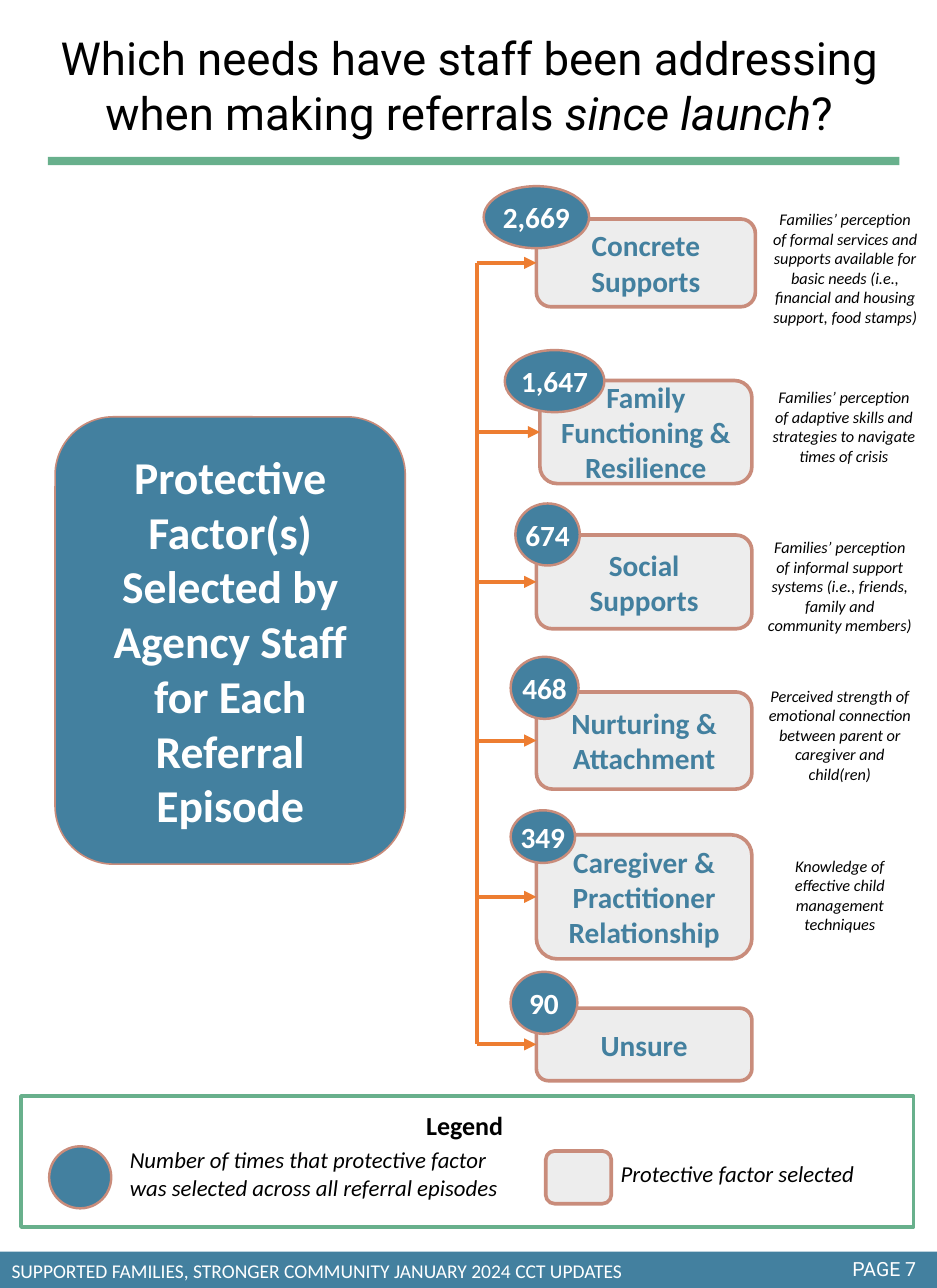
from lxml import etree
from pptx import Presentation
from pptx.dml.color import RGBColor
from pptx.enum.shapes import MSO_CONNECTOR, MSO_SHAPE
from pptx.enum.text import MSO_ANCHOR, MSO_AUTO_SIZE, PP_ALIGN
from pptx.oxml.ns import qn
from pptx.util import Inches, Pt

RECT, ROUNDED, OVAL = MSO_SHAPE.RECTANGLE, MSO_SHAPE.ROUNDED_RECTANGLE, MSO_SHAPE.OVAL
STRAIGHT = MSO_CONNECTOR.STRAIGHT
LEFT, CENTER = PP_ALIGN.LEFT, PP_ALIGN.CENTER
TOP, MIDDLE = MSO_ANCHOR.TOP, MSO_ANCHOR.MIDDLE
GROW = MSO_AUTO_SIZE.SHAPE_TO_FIT_TEXT

BLUE, GREEN, ROSE, ORANGE = "43809F", "68B08C", "C98C7B", "ED7D31"
GREY, WHITE, BLACK = "EDEDED", "FFFFFF", "000000"

TITLE = {"name": "Roboto", "size": Pt(28)}
PAGE = {"name": "Roboto", "size": Pt(12)}
FOOTER = {"name": "Calibri", "size": Pt(12)}
TOPIC = {"name": "Calibri", "size": Pt(28), "bold": True}
FACTOR = {"name": "Calibri", "size": Pt(18), "bold": True}
HEADING = {"name": "Calibri", "size": Pt(16), "bold": True}
KEY = {"name": "Calibri", "size": Pt(14), "italic": True}
MEANING = {"name": "Calibri", "size": Pt(10), "italic": True}

TRUNK_X = 4.07
FACTORS = [
    ("Concrete Supports", (4.58, 1.87, 1.87, 0.75),
     "2,669", (4.13, 1.59, 0.9, 0.53),
     "Families’ perception of formal services and supports available for basic needs "
     "(i.e., financial and housing support, food stamps)", (6.49, 1.74, 1.45, 1.11)),
    ("Family Functioning & Resilience", (4.61, 3.25, 1.81, 0.88),
     "1,647", (4.31, 2.99, 0.85, 0.53),
     "Families’ perception of adaptive skills and strategies to navigate times of crisis",
     (6.48, 3.26, 1.45, 0.77)),
    ("Social Supports", (4.58, 4.57, 1.84, 0.8),
     "674", (4.4, 4.3, 0.55, 0.53),
     "Families’ perception of informal support systems "
     "(i.e., friends, family and community members)", (6.45, 4.54, 1.44, 0.94)),
    ("Nurturing & Attachment", (4.58, 5.91, 1.84, 0.83),
     "468", (4.36, 5.61, 0.58, 0.53),
     "Perceived strength of emotional connection between parent or caregiver and child(ren)",
     (6.45, 5.81, 1.44, 0.94)),
    ("Caregiver & Practitioner Relationship", (4.58, 7.13, 1.84, 1.06),
     "349", (4.36, 6.92, 0.55, 0.45),
     "Knowledge of effective child management techniques", (6.45, 7.26, 1.44, 0.77)),
    ("Unsure", (4.58, 8.61, 1.84, 0.62),
     "90", (4.36, 8.3, 0.57, 0.53), None, None),
]


def color(hex_string):
    """Turn a hex string into a colour."""
    return RGBColor.from_string(hex_string)


def lengths(box):
    """Convert a box of inches to lengths."""
    return [Inches(value) for value in box]


def within(box, left, top, width, height):
    """Place a box relative to the corner of another."""
    return box[0] + left, box[1] + top, width, height


def write(frame, paragraphs, style, ink, align=LEFT, anchor=TOP):
    """Write paragraphs, each a list of (words, format changes) runs."""
    frame.vertical_anchor = anchor
    for index, runs in enumerate(paragraphs):
        paragraph = frame.paragraphs[0] if index == 0 else frame.add_paragraph()
        paragraph.alignment = align
        for words, changes in runs:
            run = paragraph.add_run()
            run.text = words
            run.font.color.rgb = color(ink)
            for key, value in {**style, **changes}.items():
                setattr(run.font, key, value)


def add_block(slide, kind, box, fill=None, line=None, weight=1.0):
    """Add a flat preset shape."""
    block = slide.shapes.add_shape(kind, *lengths(box))
    block.shadow.inherit = False
    if fill:
        block.fill.solid()
        block.fill.fore_color.rgb = color(fill)
    else:
        block.fill.background()
    if line:
        block.line.color.rgb = color(line)
        block.line.width = Pt(weight)
    else:
        block.line.fill.background()
    return block


def add_label(slide, box, paragraphs, style, ink, align=LEFT, wrap=True):
    """Add a text box that grows with its text."""
    frame = slide.shapes.add_textbox(*lengths(box)).text_frame
    frame.word_wrap = wrap
    frame.auto_size = GROW
    write(frame, paragraphs, style, ink, align)


def add_branch(slide, start, end, arrow=False):
    """Add an orange line, with an arrowhead if asked."""
    branch = slide.shapes.add_connector(STRAIGHT, *lengths(start + end))
    branch.line.color.rgb = color(ORANGE)
    branch.line.width = Pt(2.5)
    if arrow:
        etree.SubElement(branch.line._get_or_add_ln(), qn("a:tailEnd"), type="triangle")
    etree.SubElement(branch._element.spPr, qn("a:effectLst"))
    return branch


def add_header(slide, box):
    """Add the title with the green rule under it."""
    left, top, width, height = box
    question = [[("Which needs have staff been addressing when making referrals ", {}),
                 ("since launch", {"italic": True}), ("?", {})]]
    add_label(slide, box, question, TITLE, BLACK, CENTER)
    add_block(slide, RECT, (left + 0.14, top + height + 0.09, width - 0.2, 0.07), GREEN)


def add_topic(slide, box):
    """Add the large block that names what is counted."""
    topic = add_block(slide, ROUNDED, box, BLUE, ROSE)
    words = "Protective Factor(s) Selected by Agency Staff for Each Referral Episode"
    write(topic.text_frame, [[(words, {})]], TOPIC, WHITE, CENTER, MIDDLE)


def add_factor(slide, name, box, count, count_box, meaning, meaning_box):
    """Add one factor with its count, arrow and meaning."""
    factor = add_block(slide, ROUNDED, box, GREY, ROSE, 2.25)
    write(factor.text_frame, [[(name, {})]], FACTOR, BLUE, CENTER, MIDDLE)
    badge = add_block(slide, OVAL, count_box, BLUE, ROSE, 1.5)
    badge.text_frame.margin_left = badge.text_frame.margin_right = 0
    write(badge.text_frame, [[(count, {})]], FACTOR, WHITE, CENTER, MIDDLE)
    middle = box[1] + box[3] / 2
    add_branch(slide, (TRUNK_X, middle), (box[0], middle), True).end_connect(factor, 1)
    if meaning:
        add_label(slide, meaning_box, [[(meaning, {})]], MEANING, BLACK, CENTER)


def add_factors(slide):
    """Add all factors and the trunk that joins their arrows."""
    for factor in FACTORS:
        add_factor(slide, *factor)
    first, last = FACTORS[0][1], FACTORS[-1][1]
    add_branch(slide, (TRUNK_X, first[1] + first[3] / 2), (TRUNK_X, last[1] + last[3] / 2))


def add_legend(slide, box):
    """Add the framed legend."""
    add_block(slide, RECT, box, None, GREEN, 2.25)
    add_label(slide, within(box, 3.36, 0.07, 0.87, 0.37), [[("Legend", {})]],
              HEADING, BLACK, wrap=False)
    add_block(slide, OVAL, within(box, 0.24, 0.43, 0.53, 0.53), BLUE, ROSE, 1.5)
    add_label(slide, within(box, 0.83, 0.38, 3.35, 0.57),
              [[("Number of times that protective factor", {})],
               [("was selected across all referral episodes", {})]], KEY, BLACK)
    add_block(slide, ROUNDED, within(box, 4.48, 0.47, 0.56, 0.45), GREY, ROSE, 2.25)
    add_label(slide, within(box, 5.02, 0.5, 2.65, 0.34),
              [[("Protective factor selected", {})]], KEY, BLACK)


def add_footer(slide, box):
    """Add the blue band with the report name and page number."""
    add_block(slide, RECT, box, BLUE)
    report = "SUPPORTED FAMILIES, STRONGER COMMUNITY JANUARY 2024 CCT UPDATES"
    add_label(slide, within(box, 0, 0.01, 5.51, 0.3), [[(report, {})]], FOOTER, WHITE, wrap=False)
    add_label(slide, within(box, 7.18, 0, 0.76, 0.3), [[("PAGE 7", {})]], PAGE, WHITE, wrap=False)


def main():
    """Build and save the slide."""
    deck = Presentation()
    deck.slide_width, deck.slide_height = Inches(8), Inches(11)
    slide = deck.slides.add_slide(deck.slide_layouts[6])
    add_header(slide, (0.27, 0.21, 7.47, 1.04))
    add_topic(slide, (0.47, 3.56, 2.99, 3.82))
    add_factors(slide)
    add_legend(slide, (0.18, 9.36, 7.62, 1.12))
    add_footer(slide, (0, 10.69, 8, 0.31))
    deck.save("out.pptx")


if __name__ == "__main__":
    main()
